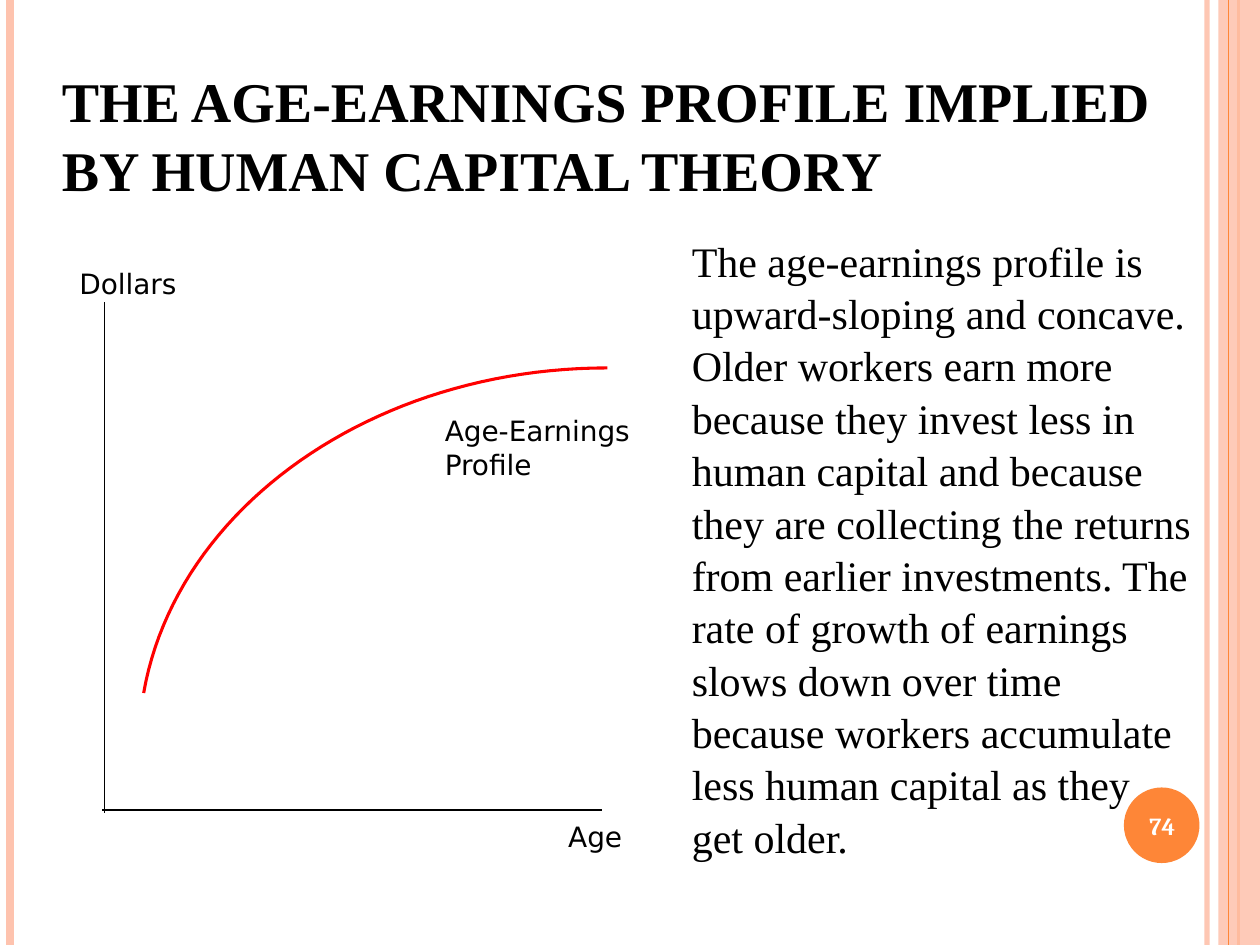
from lxml import etree
from pptx import Presentation, util as u
from pptx.dml.color import RGBColor
from pptx.enum import shapes as sh, text as tx
from pptx.oxml.ns import qn

HUE = {"peach": "FEC3AE", "orange": "FE8637", "black": "000000",
       "red": "FF0000", "white": "FFFFFF"}
COLS, ROWS = 100, 75  # grid over the slide

deck = Presentation()
deck.slide_width, deck.slide_height = u.Inches(10), u.Inches(7.5)
unit = deck.slide_width / COLS
slide = deck.slides.add_slide(deck.slide_layouts[1])
parts = slide.shapes
title, body = parts.title, slide.placeholders[1]


def grid(*cells):
    return [u.Emu(round(c * unit)) for c in cells]


def write(box, area, words, font, size, hue, bold=False, pad=1, **form):
    box.left, box.top, box.width, box.height = grid(*area)
    frame = box.text_frame
    look = {"word_wrap": True, "auto_size": tx.MSO_AUTO_SIZE.NONE,
            "vertical_anchor": tx.MSO_ANCHOR.TOP}
    look.update({"margin_" + side: grid(pad if side in ("left", "right") else pad / 2)[0]
                 for side in ("left", "right", "top", "bottom")})
    if "anchor" in form:
        look["vertical_anchor"] = form.pop("anchor")
    for key, val in look.items():
        setattr(frame, key, val)
    para = frame.paragraphs[0]
    for key, val in {"alignment": tx.PP_ALIGN.LEFT, "space_before": u.Pt(0), **form}.items():
        setattr(para, key, val)
    run = para.add_run()
    run.text = words
    for key, val in {"name": font, "size": u.Pt(size), "bold": bold}.items():
        setattr(run.font, key, val)
    run.font.color.rgb = RGBColor.from_string(HUE[hue])


# Side stripes and axes: x1, y1, x2, y2, colour, width, opacity
rules = [
    (95.8, 0, 95.8, ROWS, "peach", 3, 93),
    (0.8, 0, 0.8, ROWS, "peach", 4.5, 100),
    (98.3, 0, 98.3, ROWS, "orange", 1.5, 100),
    (97.5, 0, 97.5, ROWS, "orange", 0.75, 100),
    (8.3, 24, 8.3, 64.5, "black", 1, 100),
    (8.1, 64.3, 47.8, 64.3, "black", 1, 100),
]
# Band and page disc: preset, area, colour, opacity
forms = [
    (sh.MSO_SHAPE.RECTANGLE, (96.7, 0, 3.3, ROWS), "peach", 87),
    (sh.MSO_SHAPE.OVAL, (89.2, 62.5, 6, 6), "orange", 100),
]
for n, (*ends, hue, width, solid) in enumerate(rules):
    if n == 3:  # the band lies over the first three stripes
        for kind, area, fill, clear in forms:
            form = parts.add_shape(kind, *grid(*area))
            form.shadow.inherit = False
            form.fill.solid()
            form.fill.fore_color.rgb = RGBColor.from_string(HUE[fill])
            form.line.fill.background()
            for tone in form.fill._xPr.iter(qn("a:srgbClr")):
                etree.SubElement(tone, qn("a:alpha"), val=str(clear * 1000))
    rule = parts.add_connector(sh.MSO_CONNECTOR.STRAIGHT, *grid(*ends))
    rule.line.width = u.Pt(width)
    rule.line.color.rgb = RGBColor.from_string(HUE[hue])
    for tone in rule.line._ln.iter(qn("a:srgbClr")):
        etree.SubElement(tone, qn("a:alpha"), val=str(solid * 1000))
    etree.SubElement(rule._element.spPr, qn("a:effectLst"))

# Earnings curve: a cubic arc from the plateau down to the start
knots = [(48.2, 29.2), (29.7, 29.2), (14, 40.2), (11.4, 55)]
steps = 48
dots = []
for i in range(steps + 1):
    t = i / steps
    mix = ((1 - t) ** 3, 3 * t * (1 - t) ** 2, 3 * t * t * (1 - t), t ** 3)
    dots.append(grid(*(sum(m * k[ax] for m, k in zip(mix, knots)) for ax in (0, 1))))
path = parts.build_freeform(*dots[0])
path.add_line_segments(dots[1:], close=False)
curve = path.convert_to_shape()
curve.shadow.inherit = False
curve.fill.background()
curve.line.width = u.Pt(1.75)
curve.line.color.rgb = RGBColor.from_string(HUE["red"])

# Chart labels
for words, area in [("Dollars", (6.2, 21.1, 8.7, 2)),
                    ("Age-Earnings Profile", (35.2, 32.8, 15.5, 7.5)),
                    ("Age", (45, 65, 5.7, 2.2))]:
    write(parts.add_textbox(0, 0, 0, 0), area, words, "DejaVu Sans", 16, "black", pad=0.1)

# Title, explanation and page number
write(title, (3.9, 1.6, 90, 18),
      "THE AGE-EARNINGS PROFILE IMPLIED BY HUMAN CAPITAL THEORY",
      "Times New Roman", 32, "black", True, anchor=tx.MSO_ANCHOR.MIDDLE, line_spacing=1.03)
write(body, (53.9, 18, 41.7, 49.5),
      "The age-earnings profile is upward-sloping and concave. Older workers earn more "
      "because they invest less in human capital and because they are collecting the "
      "returns from earlier investments. The rate of growth of earnings slows down over "
      "time because workers accumulate less human capital as they get older.",
      "Times New Roman", 24, "black", line_spacing=1.04)
props = body.text_frame.paragraphs[0]._p.get_or_add_pPr()
props.set("marL", "0")
props.set("indent", "0")
etree.SubElement(props, qn("a:buNone"))
write(parts.add_textbox(0, 0, 0, 0), (88.9, 62.7, 6.7, 5.7), "74", "Cambria", 14, "white",
      True, anchor=tx.MSO_ANCHOR.MIDDLE, alignment=tx.PP_ALIGN.CENTER)

deck.save("out.pptx")
